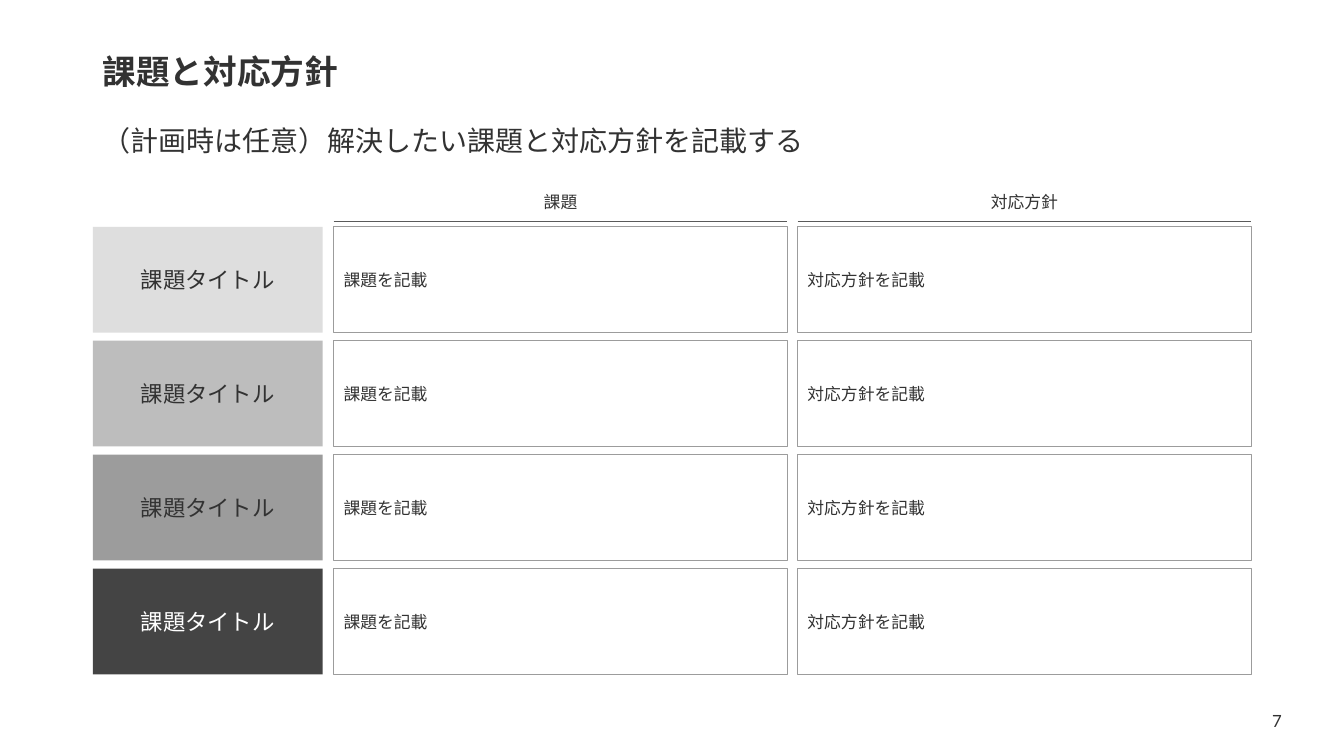
from dataclasses import dataclass
from typing import Optional

from lxml import etree
from pptx import Presentation
from pptx.dml.color import RGBColor
from pptx.enum.shapes import MSO_CONNECTOR, MSO_SHAPE
from pptx.enum.text import MSO_ANCHOR, PP_ALIGN
from pptx.oxml.ns import qn
from pptx.util import Inches, Pt

RECTANGLE = MSO_SHAPE.RECTANGLE
STRAIGHT = MSO_CONNECTOR.STRAIGHT
MIDDLE = MSO_ANCHOR.MIDDLE
LEFT, CENTER = PP_ALIGN.LEFT, PP_ALIGN.CENTER

INK = RGBColor(0x32, 0x32, 0x32)
WHITE = RGBColor(0xFF, 0xFF, 0xFF)
BORDER = RGBColor(0x9C, 0x9C, 0x9C)
RULE = RGBColor(0x5A, 0x5A, 0x5A)
LIGHT = RGBColor(0xDE, 0xDE, 0xDE)
SILVER = RGBColor(0xBD, 0xBD, 0xBD)
GRAY = RGBColor(0x9C, 0x9C, 0x9C)
CHARCOAL = RGBColor(0x44, 0x44, 0x44)

FONT = "Lato"
SLIDE_WIDTH, SLIDE_HEIGHT = 13.33, 7.5
MARGIN, CONTENT_WIDTH, HEADING_HEIGHT = 0.92, 11.5, 0.67
TITLE_COLUMN_WIDTH, COLUMN_WIDTH = 2.28, 4.5
FIRST_COLUMN, COLUMN_PITCH = 3.31, 4.6
FIRST_ROW, ROW_HEIGHT, ROW_PITCH = 2.25, 1.05, 1.13
HEADER_TOP, HEADER_HEIGHT, RULE_TOP = 1.85, 0.3, 2.2


@dataclass(frozen=True)
class Box:
    left: float
    top: float
    width: float
    height: float

    def lengths(self) -> tuple:
        return tuple(Inches(v) for v in (self.left, self.top, self.width, self.height))


@dataclass(frozen=True)
class Label:
    text: str
    size: float = 12
    color: RGBColor = INK
    bold: bool = False
    align: int = LEFT
    line_spacing: float = 1.0
    space_before: float = 0


@dataclass(frozen=True)
class Column:
    heading: str
    entry: str


@dataclass(frozen=True)
class Issue:
    fill: RGBColor
    color: RGBColor = INK


COLUMNS = [Column("課題", "課題を記載"), Column("対応方針", "対応方針を記載")]
ISSUES = [Issue(LIGHT), Issue(SILVER), Issue(GRAY), Issue(CHARCOAL, WHITE)]
HEADINGS = [
    (Box(MARGIN, 0.4, CONTENT_WIDTH, HEADING_HEIGHT),
     Label("課題と対応方針", 24, bold=True, line_spacing=0.9)),
    (Box(MARGIN, 1.08, CONTENT_WIDTH, HEADING_HEIGHT),
     Label("（計画時は任意）解決したい課題と対応方針を記載する", 20,
           line_spacing=0.9, space_before=10)),
    (Box(12.42, 6.95, 0.49, 0.4), Label("7", align=CENTER)),
]


def apply(target, values: dict) -> None:
    for attribute, value in values.items():
        setattr(target, attribute, value)


def write(frame, label: Label) -> None:
    apply(frame, {"word_wrap": True, "vertical_anchor": MIDDLE})
    paragraph = frame.paragraphs[0]
    apply(paragraph, {"alignment": label.align, "line_spacing": label.line_spacing,
                      "space_before": Pt(label.space_before)})
    run = paragraph.add_run()
    run.text = label.text
    apply(run.font, {"name": FONT, "size": Pt(label.size), "bold": label.bold})
    run.font.color.rgb = label.color


def draw_text(shapes, box: Box, label: Label) -> None:
    write(shapes.add_textbox(*box.lengths()).text_frame, label)


def draw_cell(shapes, box: Box, label: Label, fill: Optional[RGBColor] = None) -> None:
    cell = shapes.add_shape(RECTANGLE, *box.lengths())
    cell.shadow.inherit = False
    if fill is None:
        cell.fill.background()
        cell.line.color.rgb = BORDER
        cell.line.width = Pt(0.5)
    else:
        cell.fill.solid()
        cell.fill.fore_color.rgb = fill
        cell.line.fill.background()
    write(cell.text_frame, label)


def draw_rule(shapes, left: float, top: float, width: float) -> None:
    rule = shapes.add_connector(STRAIGHT, Inches(left), Inches(top),
                                Inches(left + width), Inches(top))
    rule.line.color.rgb = RULE
    rule.line.width = Pt(0.5)
    etree.SubElement(rule._element.spPr, qn("a:effectLst"))


def draw_column_header(shapes, left: float, heading: str) -> None:
    header = shapes.add_group_shape().shapes
    draw_rule(header, left, RULE_TOP, COLUMN_WIDTH)
    draw_text(header, Box(left, HEADER_TOP, COLUMN_WIDTH, HEADER_HEIGHT),
              Label(heading, align=CENTER))


def main() -> None:
    deck = Presentation()
    apply(deck, {"slide_width": Inches(SLIDE_WIDTH), "slide_height": Inches(SLIDE_HEIGHT)})
    shapes = deck.slides.add_slide(deck.slide_layouts[6]).shapes

    for box, label in HEADINGS:
        draw_text(shapes, box, label)

    for row, issue in enumerate(ISSUES):
        draw_cell(shapes,
                  Box(MARGIN, FIRST_ROW + row * ROW_PITCH, TITLE_COLUMN_WIDTH, ROW_HEIGHT),
                  Label("課題タイトル", 16, issue.color, align=CENTER), issue.fill)

    for index, column in enumerate(COLUMNS):
        left = FIRST_COLUMN + index * COLUMN_PITCH
        draw_column_header(shapes, left, column.heading)
        for row in range(len(ISSUES)):
            draw_cell(shapes,
                      Box(left, FIRST_ROW + row * ROW_PITCH, COLUMN_WIDTH, ROW_HEIGHT),
                      Label(column.entry))

    deck.save("out.pptx")


if __name__ == "__main__":
    main()
